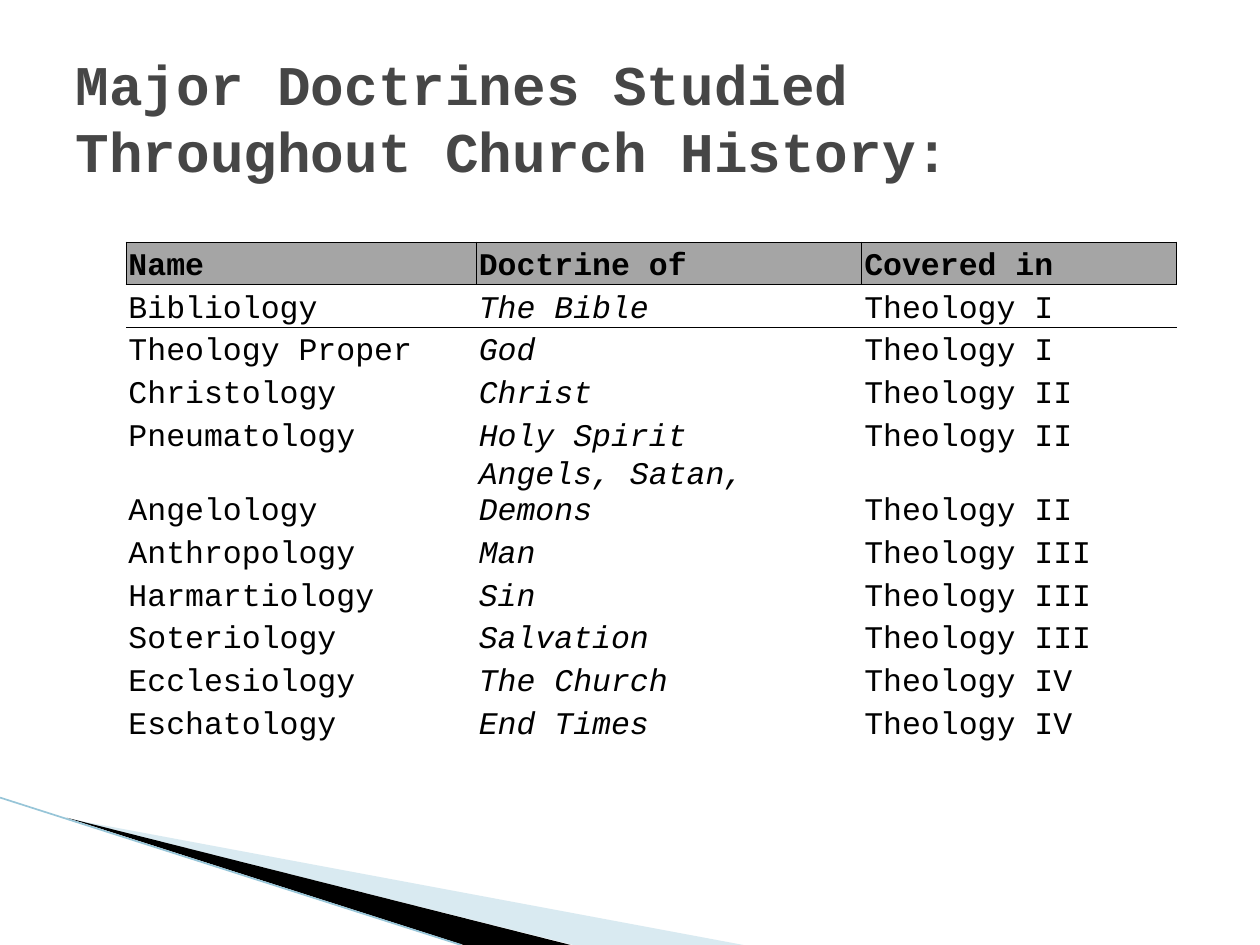
from lxml.etree import SubElement
from pptx import Presentation
from pptx.dml.color import RGBColor
from pptx.enum.shapes import MSO_CONNECTOR as Link
from pptx.enum.text import MSO_ANCHOR as Anchor, MSO_AUTO_SIZE as Fit, PP_ALIGN as Align
from pptx.oxml import parse_xml
from pptx.oxml.ns import nsdecls, qn
from pptx.util import Inches, Pt

BLACK = RGBColor(0x00, 0x00, 0x00)
SLATE = RGBColor(0x46, 0x46, 0x46)
GREY = RGBColor(0xA5, 0xA5, 0xA5)
PALE = RGBColor(0xA0, 0xCB, 0xDC)
TEAL = RGBColor(0x97, 0xC5, 0xD8)
PLAIN = "{2D5ABB26-0587-4C30-8999-92F81FD0307C}"  # table style without grid

HEAD = ("Name", "Doctrine of", "Covered in")
ROWS = [
    ("Bibliology", "The Bible", "Theology I"),
    ("Theology Proper", "God", "Theology I"),
    ("Christology", "Christ", "Theology II"),
    ("Pneumatology", "Holy Spirit", "Theology II"),
    ("Angelology", "Angels, Satan, Demons", "Theology II"),
    ("Anthropology", "Man", "Theology III"),
    ("Harmartiology", "Sin", "Theology III"),
    ("Soteriology", "Salvation", "Theology III"),
    ("Ecclesiology", "The Church", "Theology IV"),
    ("Eschatology", "End Times", "Theology IV"),
]


class Page:
    font = "Courier New"

    def __init__(self, deck):
        self.slide = deck.slides.add_slide(deck.slide_layouts[5])

    def text(self, para, words, size, color, bold=False, italic=False):
        run = para.add_run()
        run.text = words
        font = run.font
        font.name, font.size = self.font, Pt(size)
        font.bold, font.italic = bold, italic
        font.color.rgb = color

    def title(self, words, left, top, width, height):
        box = self.slide.shapes.title
        box.left, box.top = Inches(left), Inches(top)
        box.width, box.height = Inches(width), Inches(height)
        frame = box.text_frame
        frame.word_wrap = True
        frame.auto_size = Fit.NONE
        frame.vertical_anchor = Anchor.MIDDLE
        para = frame.paragraphs[0]
        para.alignment = Align.LEFT
        self.text(para, words, 32, SLATE, bold=True)

    def wedge(self, points, color, alpha=None):
        first, *rest = [(Inches(x), Inches(y)) for x, y in points]
        pen = self.slide.shapes.build_freeform(*first)
        pen.add_line_segments(rest, close=True)
        shape = pen.convert_to_shape()
        shape.shadow.inherit = False
        shape.fill.solid()
        shape.fill.fore_color.rgb = color
        shape.line.fill.background()
        if alpha:
            tint = shape._element.spPr.find(qn("a:solidFill"))[0]
            SubElement(tint, qn("a:alpha"), val=str(alpha * 1000))

    def line(self, x1, y1, x2, y2, color, width):
        ends = [Inches(n) for n in (x1, y1, x2, y2)]
        link = self.slide.shapes.add_connector(Link.STRAIGHT, *ends)
        link.line.color.rgb = color
        link.line.width = Pt(width)
        SubElement(link._element.spPr, qn("a:effectLst"))

    def border(self, cell, sides):
        props = cell._tc.get_or_add_tcPr()
        for spot, side in enumerate(sides):
            props.insert(spot, parse_xml(
                f'<a:ln{side} {nsdecls("a")} w="{Pt(0.5)}"><a:solidFill>'
                f'<a:srgbClr val="{BLACK}"/></a:solidFill></a:ln{side}>'))

    def cell(self, cell, words, head, italic):
        cell.margin_left = cell.margin_right = cell.margin_top = Inches(0.02)
        cell.margin_bottom = 0
        cell.vertical_anchor = Anchor.BOTTOM
        if head:
            cell.fill.solid()
            cell.fill.fore_color.rgb = GREY
        else:
            cell.fill.background()
        para = cell.text_frame.paragraphs[0]
        self.text(para, words, 18, BLACK, head, italic)

    def table(self, rows, left, top, widths, height):
        box = self.slide.shapes.add_table(
            len(rows), len(widths), Inches(left), Inches(top),
            Inches(sum(widths)), Inches(height * len(rows)))
        grid = box.table
        grid.first_row = grid.horz_banding = False
        grid._tbl.tblPr.find(qn("a:tableStyleId")).text = PLAIN
        for col, width in zip(grid.columns, widths):
            col.width = Inches(width)
        for r, row in enumerate(rows):
            grid.rows[r].height = Inches(height)
            for c, words in enumerate(row):
                self.cell(grid.cell(r, c), words, r == 0, r > 0 and c == 1)
                if r < 2:
                    self.border(grid.cell(r, c), "T" if r else "LRTB")


def main():
    deck = Presentation()
    deck.slide_width, deck.slide_height = Inches(10), Inches(7.5)
    page = Page(deck)

    # Corner wedges
    page.wedge([(0.55, 6.5), (5.9, 7.5), (4.55, 7.5)], PALE, 40)
    page.wedge([(0.53, 6.49), (4.53, 7.5), (3.68, 7.5)], BLACK)
    page.line(0, 6.33, 3.66, 7.5, TEAL, 0.95)

    # Heading and table of doctrines
    page.title("Major Doctrines Studied Throughout Church History:",
               0.5, 0.3, 9, 1.25)
    page.table([HEAD] + ROWS, 1, 1.92, (2.78, 3.06, 2.5), 0.34)

    deck.save("out.pptx")


if __name__ == "__main__":
    main()
